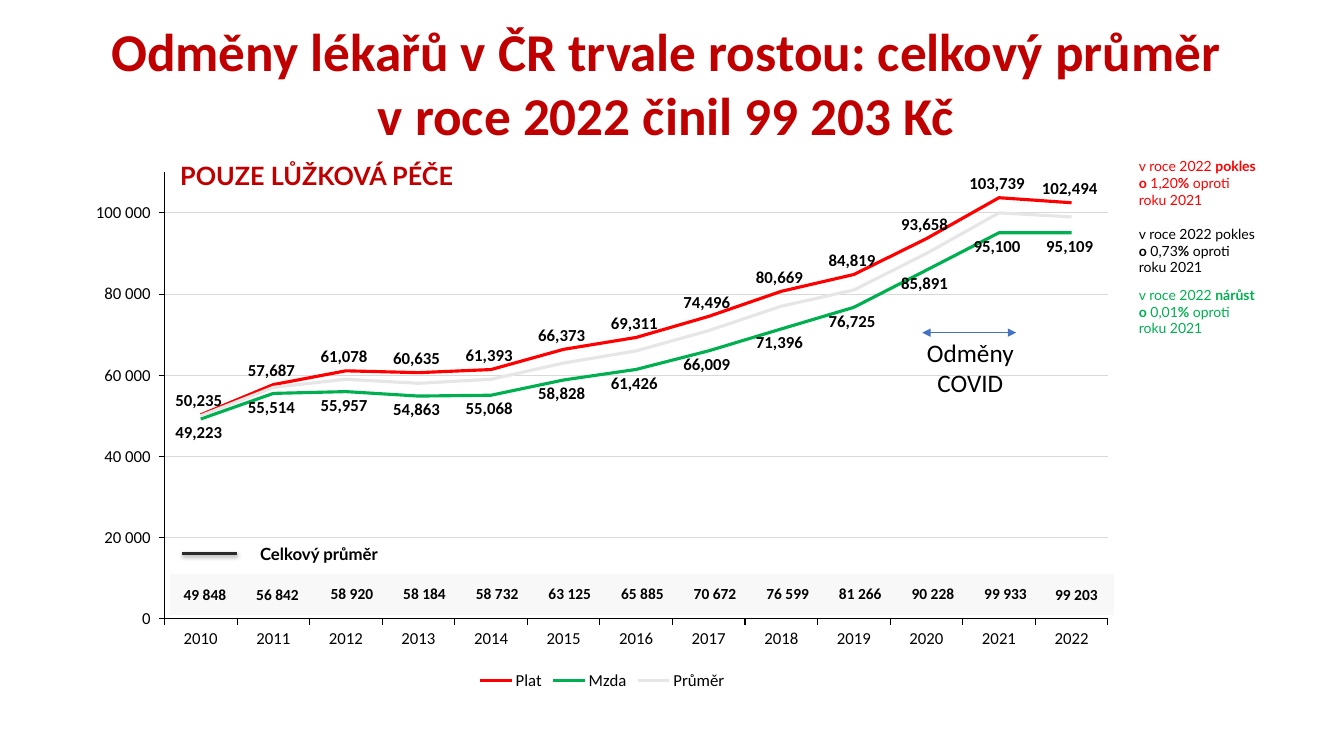
"""Builds a slide on the pay of hospital doctors in the Czech Republic, 2010 to 2022."""
from lxml import etree
from pptx import Presentation
from pptx.chart.data import CategoryChartData
from pptx.dml.color import RGBColor
from pptx.enum.chart import XL_CHART_TYPE, XL_LABEL_POSITION, XL_LEGEND_POSITION, XL_TICK_LABEL_POSITION, XL_TICK_MARK
from pptx.enum.shapes import MSO_CONNECTOR
from pptx.enum.text import MSO_ANCHOR, MSO_AUTO_SIZE, PP_ALIGN
from pptx.oxml import parse_xml
from pptx.oxml.ns import nsdecls, qn
from pptx.util import Pt

LEFT, CENTER, RIGHT = PP_ALIGN.LEFT, PP_ALIGN.CENTER, PP_ALIGN.RIGHT
MIDDLE = MSO_ANCHOR.MIDDLE
ABOVE, BELOW = XL_LABEL_POSITION.ABOVE, XL_LABEL_POSITION.BELOW
OUTSIDE = XL_TICK_MARK.OUTSIDE
BLACK = RGBColor(0x00, 0x00, 0x00)
DARK_RED = RGBColor(0xC0, 0x00, 0x00)
RED = RGBColor(0xFF, 0x00, 0x00)
GREEN = RGBColor(0x00, 0xB0, 0x50)
GRAY = RGBColor(0xE7, 0xE6, 0xE6)
GRID_GRAY = RGBColor(0xD9, 0xD9, 0xD9)
BAND_GRAY = RGBColor(0xF8, 0xF8, 0xF8)
CHARCOAL = RGBColor(0x29, 0x29, 0x29)
BLUE = RGBColor(0x44, 0x72, 0xC4)
CALIBRI, LATO = "Calibri", "Lato"

TITLE = ["Odměny lékařů v ČR trvale rostou: celkový průměr ", "v roce 2022 činil 99 203 Kč "]
SUBTITLE = "POUZE LŮŽKOVÁ PÉČE"
COVID = "Odměny COVID"
AVERAGE_LABEL = "Celkový průměr"
YEARS = [str(year) for year in range(2010, 2023)]
SALARIES = [50235, 57687, 61078, 60635, 61393, 66373, 69311, 74496, 80669, 84819, 93658, 103739, 102494]
WAGES = [49223, 55514, 55957, 54863, 55068, 58828, 61426, 66009, 71396, 76725, 85891, 95100, 95109]
AVERAGES = [50000, 57000, 59000, 58000, 59000, 63000, 66000, 71000, 77000, 81000, 90000, 100000, 99000]
AVERAGE_ROW = ["49 848 ", "56 842 ", "58 920", "58 184", "58 732", "63 125", "65 885",
               "70 672", "76 599", "81 266", "90 228", "99 933", "99 203 "]
SERIES = [("Plat", SALARIES, RED, ABOVE), ("Mzda", WAGES, GREEN, BELOW), ("Průměr", AVERAGES, GRAY, None)]
NOTES = [
    (109.1, RED, [("v roce 2022 ", False), ("pokles o", True), (" 1,20", False),
                  ("%", True), (" oproti roku 2021", False)]),
    (157.4, BLACK, [("v roce 2022 pokles", False), (" o", True), (" 0,73", False),
                    ("%", True), (" oproti roku 2021", False)]),
    (200.9, GREEN, [("v roce 2022 ", False), ("nárůst o", True), (" 0,01", False),
                    ("%", True), (" oproti roku 2021", False)]),
]
AXIS_FORMAT = r"#\ ##0_ ;[Red]\-#\ ##0\ "
LABEL_FORMAT = r"#,##0_ ;[Red]\-#,##0\ "
CHART_BOX = (54, 115.9, 752.4, 380.5)
PLOT_BOX = (117.5, 123.1, 673.9, 318.9)
NO_TABLE_STYLE = "{2D5ABB26-0587-4C30-8999-92F81FD0307C}"
SHADOW = (f'<a:effectLst {nsdecls("a")}><a:outerShdw blurRad="39370" dist="20320" dir="5400000" '
          'rotWithShape="0"><a:srgbClr val="000000"><a:alpha val="38000"/></a:srgbClr>'
          '</a:outerShdw></a:effectLst>')
NO_EFFECT = f'<a:effectLst {nsdecls("a")}/>'


def set_font(font, size, name, color=BLACK, bold=False):
    font.size, font.name, font.bold = Pt(size), name, bold
    font.color.rgb = color


def write(frame, paragraphs, size, name, color=BLACK, align=LEFT):
    for index, runs in enumerate(paragraphs):
        paragraph = frame.add_paragraph() if index else frame.paragraphs[0]
        paragraph.alignment = align
        for text, bold in runs:
            run = paragraph.add_run()
            run.text = text
            set_font(run.font, size, name, color, bold)


def add_text(slide, box, paragraphs, *style):
    frame = slide.shapes.add_textbox(*map(Pt, box)).text_frame
    frame.word_wrap = True
    frame.auto_size = MSO_AUTO_SIZE.SHAPE_TO_FIT_TEXT
    write(frame, paragraphs, *style)
    return frame


def add_line(slide, left, right, y, color, width, effect):
    line = slide.shapes.add_connector(MSO_CONNECTOR.STRAIGHT, Pt(left), Pt(y), Pt(right), Pt(y))
    line.line.color.rgb = color
    line.line.width = Pt(width)
    line._element.spPr.append(parse_xml(effect))
    return line


def add_row(slide, box, texts, size, name, align, fill=None):
    table = slide.shapes.add_table(1, len(texts), *map(Pt, box)).table
    table.first_row = table.horz_banding = False
    table._tbl.tblPr.find(qn("a:tableStyleId")).text = NO_TABLE_STYLE
    for cell, text in zip(table.iter_cells(), texts):
        cell.vertical_anchor = MIDDLE
        if fill is None:
            cell.fill.background()
        else:
            cell.fill.solid()
            cell.fill.fore_color.rgb = fill
        write(cell.text_frame, [[(text, True)]], size, name, BLACK, align)
    return table


def style_axis(axis):
    axis.major_tick_mark = OUTSIDE
    set_font(axis.tick_labels.font, 12, CALIBRI)
    axis.format.line.color.rgb = BLACK
    axis.format.line.width = Pt(0.75)


def place_plot(chart):
    chart_left, chart_top, chart_width, chart_height = CHART_BOX
    left, top, width, height = PLOT_BOX
    settings = [("layoutTarget", "inner"), ("xMode", "edge"), ("yMode", "edge"),
                ("x", (left - chart_left) / chart_width), ("y", (top - chart_top) / chart_height),
                ("w", width / chart_width), ("h", height / chart_height)]
    children = "".join(f'<c:{tag} val="{value}"/>' for tag, value in settings)
    plot_area = chart._chartSpace.chart.plotArea
    for layout in plot_area.findall(qn("c:layout")):
        plot_area.remove(layout)
    plot_area.insert(0, parse_xml(
        f'<c:layout {nsdecls("c")}><c:manualLayout>{children}</c:manualLayout></c:layout>'))


def add_pay_chart(slide):
    data = CategoryChartData()
    data.categories = YEARS
    for name, values, _, _ in SERIES:
        data.add_series(name, values)
    chart = slide.shapes.add_chart(XL_CHART_TYPE.LINE, *map(Pt, CHART_BOX), data).chart
    set_font(chart.font, 10, CALIBRI)
    chart.has_title = False
    chart.has_legend = True
    chart.legend.position = XL_LEGEND_POSITION.BOTTOM
    chart.legend.include_in_layout = False
    set_font(chart.legend.font, 12, CALIBRI)
    style_axis(chart.category_axis)
    chart.category_axis.tick_label_position = XL_TICK_LABEL_POSITION.LOW
    value_axis = chart.value_axis
    style_axis(value_axis)
    value_axis.minimum_scale, value_axis.maximum_scale, value_axis.major_unit = 0, 110000, 20000
    value_axis.tick_labels.number_format = AXIS_FORMAT
    value_axis.tick_labels.number_format_is_linked = False
    value_axis.major_gridlines.format.line.color.rgb = GRID_GRAY
    value_axis.major_gridlines.format.line.width = Pt(0.75)
    plot = chart.plots[0]
    plot.vary_by_categories = False
    for series, (_, _, color, position) in zip(plot.series, SERIES):
        series.smooth = False
        series.format.line.color.rgb = color
        series.format.line.width = Pt(2.25)
        if position is not None:
            labels = series.data_labels
            labels.show_value = True
            labels.position = position
            labels.number_format = LABEL_FORMAT
            labels.number_format_is_linked = False
            set_font(labels.font, 12, CALIBRI, BLACK, True)
    place_plot(chart)


def main():
    presentation = Presentation()
    presentation.slide_width, presentation.slide_height = Pt(960), Pt(540)
    slide = presentation.slides.add_slide(presentation.slide_layouts[6])
    title = add_text(slide, (43.9, 9.4, 872.6, 99.4), [[(line, True)] for line in TITLE],
                     38, CALIBRI, DARK_RED, CENTER)
    title.paragraphs[1]._p.get_or_add_pPr().set("indent", str(Pt(-8.6)))
    add_pay_chart(slide)
    for top, color, runs in NOTES:
        add_text(slide, (806.4, top, 99.4, 43.9), [runs], 10, LATO, color)
    add_row(slide, (167, 380.9, 110.2, 29.5), [AVERAGE_LABEL], 12, LATO, RIGHT)
    add_line(slide, 129.9, 169.6, 395.3, CHARCOAL, 2, SHADOW)
    table = add_row(slide, (121.7, 410.1, 674.6, 29.2), AVERAGE_ROW, 11, CALIBRI, CENTER, BAND_GRAY)
    for column in (0, 1, len(AVERAGE_ROW) - 1):
        cell = table.cell(0, column)
        cell.margin_left = cell.margin_right = cell.margin_top = Pt(0.7)
        cell.margin_bottom = Pt(0)
    add_text(slide, (643.4, 237.3, 99.4, 51.1), [[(COVID, False)]], 18, CALIBRI, BLACK, CENTER)
    arrow = add_line(slide, 658.8, 725.8, 237.6, BLUE, 0.5, NO_EFFECT)
    for end in ("a:headEnd", "a:tailEnd"):
        etree.SubElement(arrow.line._get_or_add_ln(), qn(end), type="triangle")
    add_text(slide, (121.7, 111.2, 480.2, 28.8), [[(SUBTITLE, True)]], 18, LATO, DARK_RED)
    presentation.save("out.pptx")


if __name__ == "__main__":
    main()
